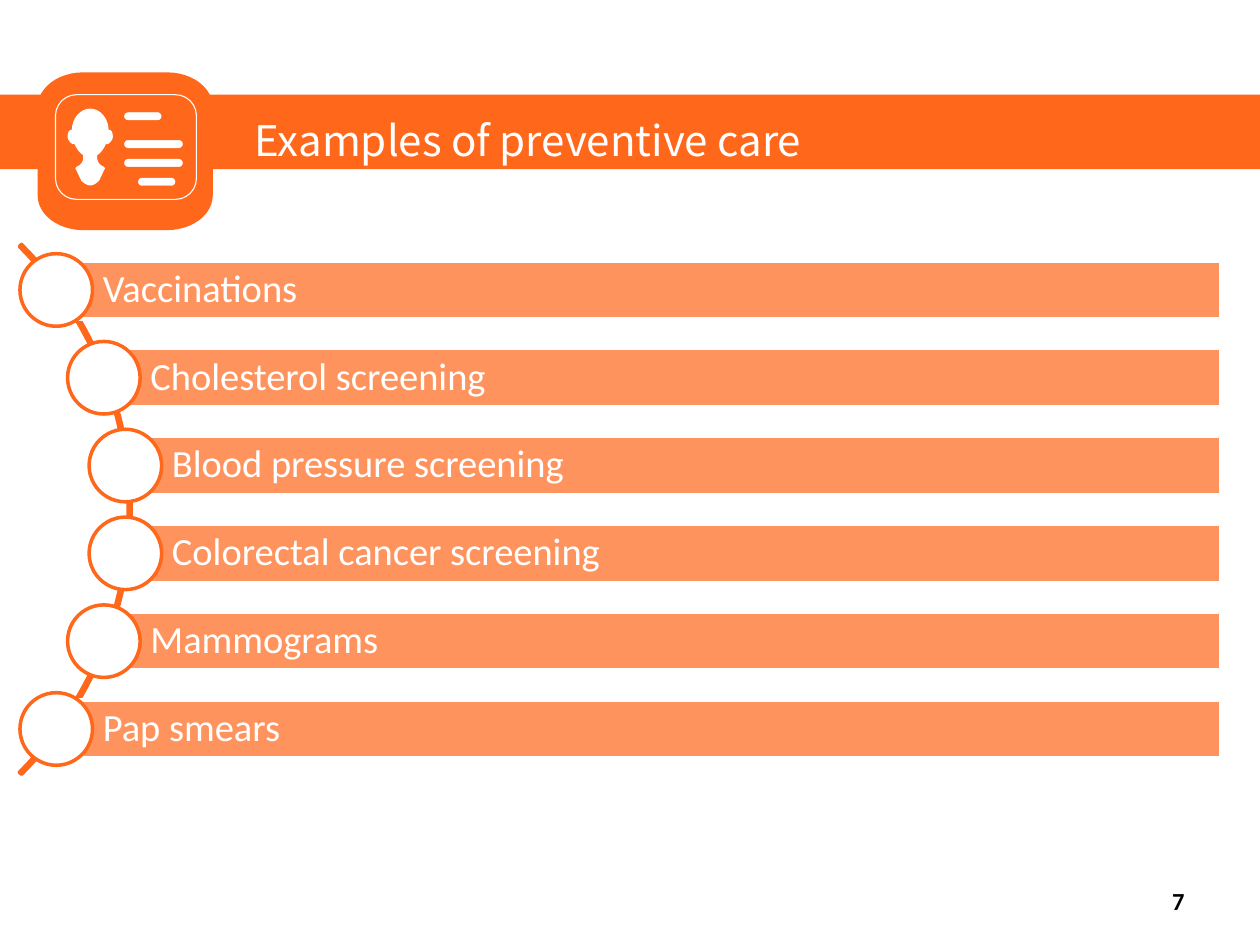
import dataclasses
import math

import pptx
import pptx.dml.color
import pptx.enum.shapes
import pptx.enum.text
import pptx.util

Cm = pptx.util.Cm
SHAPE = pptx.enum.shapes.MSO_SHAPE
ANCHOR = pptx.enum.text.MSO_ANCHOR
ALIGN = pptx.enum.text.PP_ALIGN


@dataclasses.dataclass(frozen=True)
class Theme:
    """Colours, fonts and type sizes of the slide."""
    accent: str = "FF671B"
    bar: str = "FF935D"
    light: str = "FFFFFF"
    dark: str = "000000"
    title_font: str = "Noto Sans CJK JP"
    body_font: str = "Calibri"
    title_size: int = 24
    body_size: int = 22
    number_size: int = 14
    line_width: int = 2
    card_line_width: float = 0.63


THEME = Theme()
EXAMPLES = (
    "Vaccinations",
    "Cholesterol screening",
    "Blood pressure screening",
    "Colorectal cancer screening",
    "Mammograms",
    "Pap smears",
)


def rgb(colour):
    """Return the colour object for a hex string."""
    return pptx.dml.color.RGBColor.from_string(colour)


def paint(shape, fill=None, line=None, width=THEME.line_width):
    """Give a shape its fill and outline, and no shadow."""
    shape.shadow.inherit = False
    if fill:
        shape.fill.solid()
        shape.fill.fore_color.rgb = rgb(fill)
    else:
        shape.fill.background()
    if line:
        shape.line.color.rgb = rgb(line)
        shape.line.width = pptx.util.Pt(width)
    else:
        shape.line.fill.background()
    return shape


def add_preset(slide, preset, box):
    """Add a preset shape in a box given in centimetres."""
    return slide.shapes.add_shape(preset, *map(Cm, box))


def add_outline(slide, points):
    """Add a closed freeform through points given in centimetres."""
    corners = [(Cm(x), Cm(y)) for x, y in points]
    builder = slide.shapes.build_freeform(*corners[0])
    builder.add_line_segments(corners[1:], close=True)
    return builder.convert_to_shape()


def write(shape, text, font, size, colour, align=ALIGN.LEFT, bold=False):
    """Set a one-paragraph text and its format."""
    frame = shape.text_frame
    frame.word_wrap = True
    frame.text = text
    paragraph = frame.paragraphs[0]
    paragraph.alignment = align
    run = paragraph.runs[0]
    run.font.name = font
    run.font.size = pptx.util.Pt(size)
    run.font.bold = bold
    run.font.color.rgb = rgb(colour)
    return paragraph


def curve(start, control_a, control_b, end, steps=8):
    """Return the points of a cubic curve after its start."""
    points = []
    for step in range(1, steps + 1):
        t = step / steps
        weights = ((1 - t) ** 3, 3 * t * (1 - t) ** 2, 3 * t * t * (1 - t), t ** 3)
        points.append(tuple(
            sum(w * value for w, value in zip(weights, values))
            for values in zip(start, control_a, control_b, end)))
    return points


def add_badge(slide, box):
    """Draw the badge with its elliptical corners."""
    left, top, width, height = box
    radius_x, radius_y = 0.26 * width, 0.22 * height
    centre_x, centre_y = left + width / 2, top + height / 2
    points = []
    for quarter, (side_x, side_y) in enumerate(((1, 1), (-1, 1), (-1, -1), (1, -1))):
        for step in range(13):
            angle = math.radians(90 * quarter + 7.5 * step)
            points.append((
                centre_x + side_x * (width / 2 - radius_x) + radius_x * math.cos(angle),
                centre_y + side_y * (height / 2 - radius_y) + radius_y * math.sin(angle)))
    paint(add_outline(slide, points), THEME.accent)


def add_portrait(slide, axis, top):
    """Draw the mirrored head-and-neck silhouette around its axis."""
    curves = (
        ((0, 0), (0.2, 0), (0.37, 0.2), (0.37, 0.43)),
        ((0.39, 0.43), (0.43, 0.43), (0.47, 0.51), (0.45, 0.61)),
        ((0.45, 0.61), (0.42, 0.66), (0.37, 0.74), (0.32, 0.71)),
        ((0.32, 0.71), (0.27, 0.81), (0.22, 0.89), (0.14, 0.94)),
        ((0.14, 0.99), (0.14, 1.07), (0.19, 1.14), (0.27, 1.17)),
        ((0.29, 1.19), (0.3, 1.2), (0.3, 1.21), (0.29, 1.22)),
        ((0.18, 1.45), (0.14, 1.5), (0.06, 1.55), (0, 1.55)),
    )
    half = [point for part in curves for point in (part[0], *curve(*part))]
    mirrored = [(-x, y) for x, y in reversed(half[1:-1])]
    points = [(axis + x, top + y) for x, y in half + mirrored]
    paint(add_outline(slide, points), THEME.light)


def add_card(slide, box):
    """Draw the identity card with its portrait and text strokes."""
    left, top, width, height = box
    add_portrait(slide, left + 0.7, top + 0.28)
    for x, y, length in ((1.39, 0.36, 0.74), (1.39, 0.92, 1.17),
                         (1.39, 1.3, 1.17), (1.67, 1.68, 0.74)):
        stroke = add_preset(slide, SHAPE.ROUNDED_RECTANGLE, (left + x, top + y, length, 0.15))
        stroke.adjustments[0] = 0.5
        paint(stroke, THEME.light, THEME.light, 0.25)
    frame = add_preset(slide, SHAPE.ROUNDED_RECTANGLE, box)
    frame.adjustments[0] = 0.2
    paint(frame, line=THEME.light, width=THEME.card_line_width)


def add_header(slide, box):
    """Place the band, the badge and the slide title."""
    left, top, width, height = box
    add_badge(slide, (left + 1.19, top - 0.45, 3.53, 3.18))
    paint(add_preset(slide, SHAPE.RECTANGLE, box), THEME.accent)
    add_card(slide, (left + 1.55, top, 2.84, 2.11))
    title = slide.shapes.title
    title.left, title.top = Cm(left + 5.31), Cm(top + 0.28)
    title.width, title.height = Cm(20.52), Cm(1.27)
    title.text_frame.vertical_anchor = ANCHOR.TOP
    title.text_frame.auto_size = pptx.enum.text.MSO_AUTO_SIZE.NONE
    write(title, "Examples of preventive care", THEME.title_font, THEME.title_size, THEME.light)
    slide.shapes._spTree.append(title._element)


def add_example(slide, text, box):
    """Place one example bar with the circle on its left end."""
    left, top, width, height = box
    bar = paint(add_preset(slide, SHAPE.RECTANGLE, box), THEME.bar, THEME.light)
    frame = bar.text_frame
    frame.margin_left = Cm(0.94)
    frame.margin_right = frame.margin_top = frame.margin_bottom = Cm(0.15)
    frame.vertical_anchor = ANCHOR.MIDDLE
    paragraph = write(bar, text, THEME.body_font, THEME.body_size, THEME.light)
    paragraph.line_spacing = 0.9
    diameter = 1.25 * height
    circle = (left - diameter / 2, top + (height - diameter) / 2, diameter, diameter)
    paint(add_preset(slide, SHAPE.OVAL, circle), THEME.light, THEME.accent)


def add_example_list(slide, box):
    """Place the examples along an arc that bulges to the right."""
    left, top, width, height = box
    bar_height, arc_size, radius = 1.17, 15.11, 7.49
    centre_x, centre_y = left - 5.29, top + height / 2
    arc = add_preset(slide, SHAPE.BLOCK_ARC, (
        centre_x - arc_size / 2, centre_y - arc_size / 2, arc_size, arc_size))
    for index, value in enumerate((189, 27, 0.004)):
        arc.adjustments[index] = value
    paint(arc, line=THEME.accent)
    pitch = (height - bar_height) / (len(EXAMPLES) - 1)
    for index, text in enumerate(EXAMPLES):
        bar_top = top + index * pitch
        rise = bar_top + bar_height / 2 - centre_y
        bar_left = centre_x + math.sqrt(radius ** 2 - rise ** 2)
        add_example(slide, text, (bar_left, bar_top, left + width - bar_left, bar_height))


def add_slide_number(slide, box):
    """Place the slide number at the right of its box."""
    number = slide.shapes.add_textbox(*map(Cm, box))
    number.text_frame.vertical_anchor = ANCHOR.MIDDLE
    write(number, "7", THEME.body_font, THEME.number_size, THEME.dark, ALIGN.RIGHT, True)


def main():
    """Build the slide and save it."""
    deck = pptx.Presentation()
    deck.slide_width, deck.slide_height = Cm(25.4), Cm(19.05)
    slide = deck.slides.add_slide(deck.slide_layouts[5])
    add_header(slide, (-0.43, 1.91, 27.74, 1.5))
    add_example_list(slide, (0.38, 5.26, 24.23, 10.02))
    add_slide_number(slide, (18.21, 17.65, 5.92, 1.02))
    deck.save("out.pptx")


if __name__ == "__main__":
    main()
